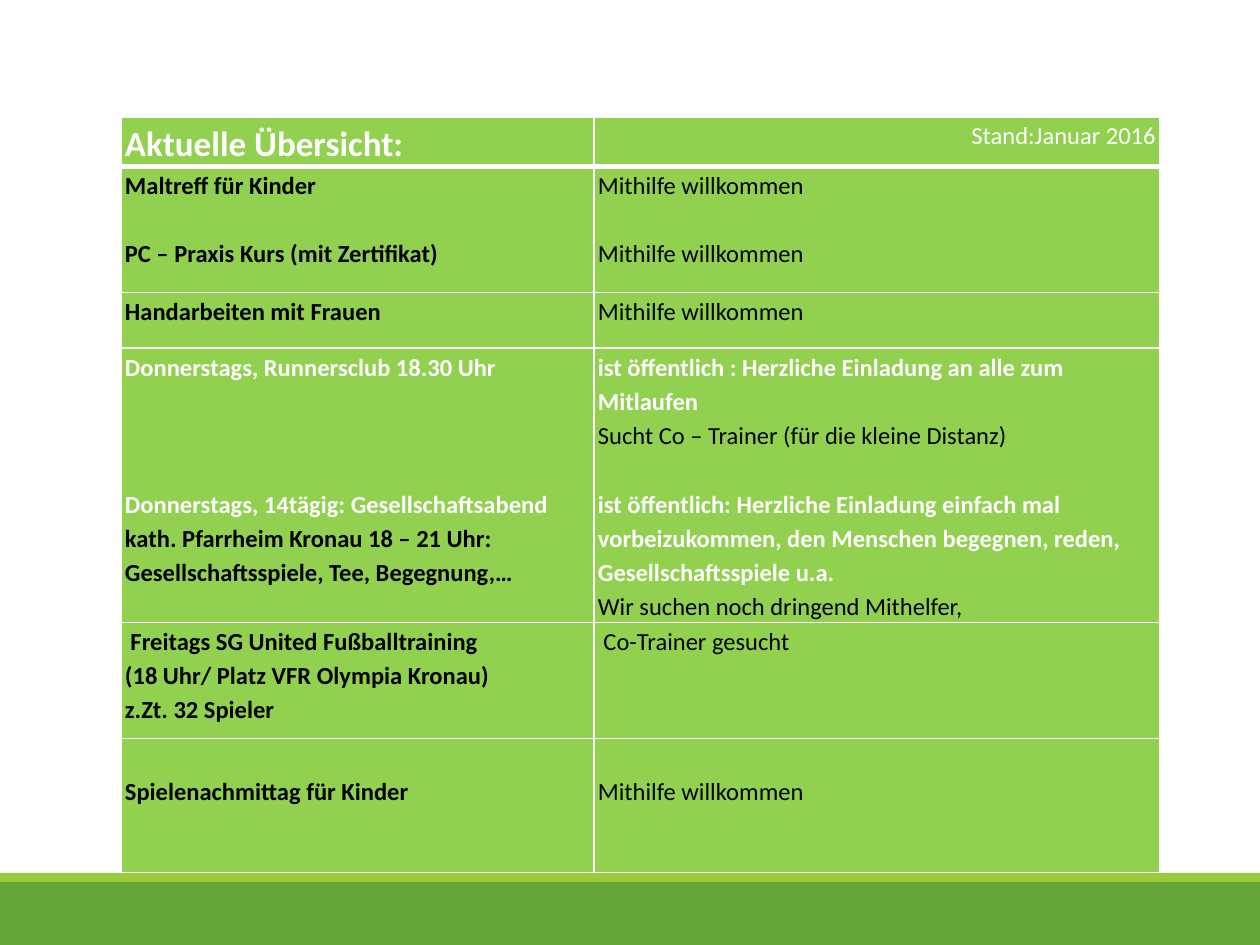
from pptx import Presentation
from pptx.dml.color import RGBColor
from pptx.enum.shapes import MSO_SHAPE
from pptx.enum.text import PP_ALIGN
from pptx.oxml import parse_xml
from pptx.oxml.ns import nsdecls
from pptx.util import Emu, Pt

PX = 914400 // 126
WHITE = RGBColor(0xFF, 0xFF, 0xFF)
BLACK = RGBColor(0x00, 0x00, 0x00)
CELL_GREEN = RGBColor(0x92, 0xD0, 0x50)
BAR_GREEN = RGBColor(0x63, 0xA5, 0x37)
STRIPE_GREEN = RGBColor(0x99, 0xCB, 0x38)
LINE = 19.6  # height of one text line in points


def px(n):
    return Emu(n * PX)


def add_borders(cell, bottom):
    tcPr = cell._tc.get_or_add_tcPr()
    for i, (side, width) in enumerate((("L", 1), ("R", 1), ("T", 1), ("B", bottom))):
        tcPr.insert(i, parse_xml(
            f'<a:ln{side} {nsdecls("a")} w="{Pt(width)}"><a:solidFill>'
            f'<a:srgbClr val="{WHITE}"/></a:solidFill></a:ln{side}>'))


# Text formats
TITLE = {"size": Pt(20), "bold": True, "color": WHITE}
DATE = {"size": Pt(14), "bold": False, "color": WHITE}
OPEN = {"size": Pt(14), "bold": True, "color": WHITE}
NAME = {"size": Pt(14), "bold": True, "color": BLACK}
HELP = {"size": Pt(14), "bold": False, "color": BLACK}

# Rows: height, lines above the text, then per cell (text, format, lines before)
ROWS = [
    (47, 0, [("Aktuelle Übersicht:", TITLE, 0)],
     [("Stand:Januar 2016", DATE, 0)]),
    (126, 0, [("Maltreff für Kinder", NAME, 0),
              ("PC – Praxis Kurs (mit Zertifikat)", NAME, 1)],
     [("Mithilfe willkommen", HELP, 0), ("Mithilfe willkommen", HELP, 1)]),
    (56, 0, [("Handarbeiten mit Frauen", NAME, 0)],
     [("Mithilfe willkommen", HELP, 0)]),
    (274, 0, [("Donnerstags, Runnersclub 18.30 Uhr", OPEN, 0),
              ("Donnerstags, 14tägig: Gesellschaftsabend", OPEN, 3),
              ("kath. Pfarrheim Kronau 18 – 21 Uhr: "
               "Gesellschaftsspiele, Tee, Begegnung,…", NAME, 0)],
     [("ist öffentlich : Herzliche Einladung an alle zum Mitlaufen", OPEN, 0),
      ("Sucht Co – Trainer (für die kleine Distanz)", HELP, 0),
      ("ist öffentlich: Herzliche Einladung einfach mal vorbeizukommen, "
       "den Menschen begegnen, reden, Gesellschaftsspiele u.a.", OPEN, 1),
      ("Wir suchen noch dringend Mithelfer,", HELP, 0)]),
    (116, 0, [(" Freitags SG United Fußballtraining", NAME, 0),
              ("(18 Uhr/ Platz VFR Olympia Kronau) \vz.Zt. 32 Spieler", NAME, 0)],
     [(" Co-Trainer gesucht", HELP, 0)]),
    (134, 1, [("Spielenachmittag für Kinder", NAME, 0)],
     [("Mithilfe willkommen", HELP, 0)]),
]

prs = Presentation()
prs.slide_width, prs.slide_height = px(1260), px(945)
s = prs.slides.add_slide(prs.slide_layouts[6])

# Footer bars
for top, height, color in ((882, 63, BAR_GREEN), (873, 9, STRIPE_GREEN)):
    sp = s.shapes.add_shape(MSO_SHAPE.RECTANGLE, 0, px(top), px(1260), px(height))
    sp.shadow.inherit = False
    sp.fill.solid()
    sp.fill.fore_color.rgb = color
    sp.line.fill.background()

# Overview table
widths = (473, 566)
table = s.shapes.add_table(len(ROWS), 2, px(121), px(117), px(sum(widths)),
                           px(sum(row[0] for row in ROWS))).table
for col, width in zip(table.columns, widths):
    col.width = px(width)

for i, (height, lines_above, *texts) in enumerate(ROWS):
    table.rows[i].height = px(height)
    for j, paragraphs in enumerate(texts):
        cell = table.cell(i, j)
        cell.margin_left = cell.margin_right = px(4)
        cell.margin_top = Pt(LINE * lines_above)
        cell.margin_bottom = 0
        cell.fill.solid()
        cell.fill.fore_color.rgb = CELL_GREEN
        add_borders(cell, 3 if i == 0 else 1)
        tf = cell.text_frame
        for n, (text, fmt, lines_before) in enumerate(paragraphs):
            p = tf.add_paragraph() if n else tf.paragraphs[0]
            p.text = text
            p.line_spacing = 1.15
            if lines_before:
                p.space_before = Pt(LINE * lines_before)
            if fmt is DATE:
                p.alignment = PP_ALIGN.RIGHT
            for r in p.runs:
                r.font.name = "Calibri"
                for key, value in fmt.items():
                    if key == "color":
                        r.font.color.rgb = value
                    else:
                        setattr(r.font, key, value)

prs.save("out.pptx")
